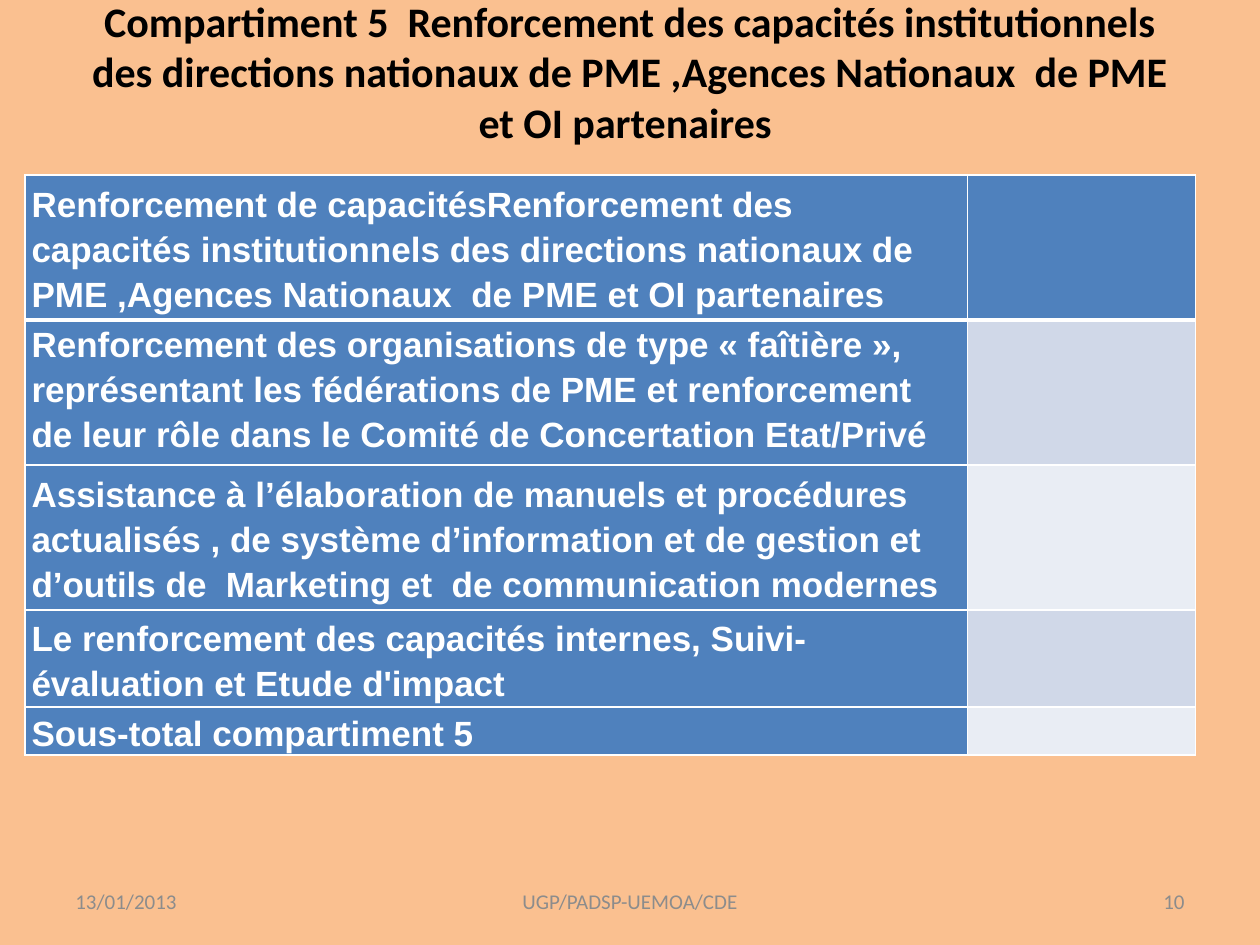
from dataclasses import dataclass

from lxml.etree import SubElement
from pptx import Presentation
from pptx.dml.color import RGBColor
from pptx.enum.text import MSO_ANCHOR as Anchor, PP_ALIGN as Align
from pptx.oxml.ns import qn
from pptx.util import Inches, Pt


@dataclass(frozen=True)
class Theme:
    background: str = "FAC090"
    title: str = "000000"
    label: str = "FFFFFF"
    border: str = "FFFFFF"
    accent: str = "4F81BD"
    bands: tuple = ("D0D8E8", "E9EDF4")
    footer: str = "8C8C8C"
    heading_font: str = "Calibri"
    table_font: str = "Arial"
    title_size: int = 24
    table_size: int = 20
    footer_size: int = 12


THEME = Theme()
WIDTH, HEIGHT = 10, 7.5

TITLE = (
    "Compartiment 5  Renforcement des capacités institutionnels des directions "
    "nationaux de PME ,Agences Nationaux  de PME et OI partenaires "
)
# Label and row height in inches
ACTIVITIES = [
    ("Renforcement de capacitésRenforcement des capacités institutionnels des "
     "directions nationaux de PME ,Agences Nationaux  de PME et OI partenaires", 1.06),
    ("Renforcement des organisations de type « faîtière », représentant les "
     "fédérations de PME et renforcement de leur rôle dans le Comité de "
     "Concertation Etat/Privé", 1.07),
    ("Assistance à l’élaboration de manuels et procédures  actualisés , de système "
     "d’information et de gestion et d’outils de  Marketing et  de communication "
     "modernes", 1.14),
    ("Le renforcement des capacités internes, Suivi-évaluation et Etude d'impact", 0.71),
    ("Sous-total compartiment 5", 0.36),
]
COLUMN_SHARES = (0.805, 0.195)
# Text, left share, width share and alignment within the footer
FOOTER = [
    ("13/01/2013", 0, 0.26, Align.LEFT),
    ("UGP/PADSP-UEMOA/CDE", 0.324, 0.352, Align.CENTER),
    ("10", 0.74, 0.26, Align.RIGHT),
]


def format_text(frame, text, font_name, size, color, bold=False, align=Align.LEFT):
    frame.text = text
    frame.word_wrap = True
    paragraph = frame.paragraphs[0]
    paragraph.alignment = align
    font = paragraph.runs[0].font
    font.name, font.size, font.bold = font_name, Pt(size), bold
    font.color.rgb = RGBColor.from_string(color)
    return paragraph


def add_text(slide, box, text, size, color, **style):
    frame = slide.shapes.add_textbox(*map(Inches, box)).text_frame
    frame.vertical_anchor = Anchor.MIDDLE
    format_text(frame, text, THEME.heading_font, size, color, **style)


def set_borders(cell, bottom_width):
    """Draw the four sides; call before filling, as borders precede the fill."""
    properties = cell._tc.get_or_add_tcPr()
    for side in "LRTB":
        width = bottom_width if side == "B" else 1
        line = SubElement(properties, qn(f"a:ln{side}"), w=str(Pt(width)))
        fill = SubElement(line, qn("a:solidFill"))
        SubElement(fill, qn("a:srgbClr"), val=THEME.border)


def style_cell(cell, color, bottom_width):
    cell.margin_left = cell.margin_right = Inches(0.05)
    cell.margin_top = cell.margin_bottom = 0
    set_borders(cell, bottom_width)
    cell.fill.solid()
    cell.fill.fore_color.rgb = RGBColor.from_string(color)


def add_activity_table(slide, box):
    table = slide.shapes.add_table(
        len(ACTIVITIES), len(COLUMN_SHARES), *map(Inches, box)
    ).table
    table.horz_banding = False
    for column, share in zip(table.columns, COLUMN_SHARES):
        column.width = Inches(box[2] * share)
    for index, (text, height) in enumerate(ACTIVITIES):
        table.rows[index].height = Inches(height)
        label, amount = table.cell(index, 0), table.cell(index, 1)
        is_header = index == 0
        bottom_width = 3 if is_header else 1
        band = THEME.accent if is_header else THEME.bands[(index - 1) % 2]
        style_cell(label, THEME.accent, bottom_width)
        style_cell(amount, band, bottom_width)
        label.vertical_anchor = Anchor.TOP if index == 1 else Anchor.MIDDLE
        paragraph = format_text(label.text_frame, text, THEME.table_font,
                                THEME.table_size, THEME.label, bold=True)
        paragraph.line_spacing = 1.15


def add_footer(slide, box):
    left, top, width, height = box
    for text, offset, share, align in FOOTER:
        part = (left + offset * width, top, share * width, height)
        add_text(slide, part, text, THEME.footer_size, THEME.footer, align=align)


def main():
    presentation = Presentation()
    presentation.slide_width, presentation.slide_height = Inches(WIDTH), Inches(HEIGHT)
    slide = presentation.slides.add_slide(presentation.slide_layouts[6])
    slide.background.fill.solid()
    slide.background.fill.fore_color.rgb = RGBColor.from_string(THEME.background)

    margin = 0.05 * WIDTH
    content_width = WIDTH - 2 * margin
    add_text(slide, (margin, 0.13, content_width, 0.87), TITLE,
             THEME.title_size, THEME.title, bold=True, align=Align.CENTER)
    table_height = sum(height for _, height in ACTIVITIES)
    add_activity_table(slide, (0.2, 1.39, 9.29, table_height))
    add_footer(slide, (margin, 6.95, content_width, 0.4))
    presentation.save("out.pptx")


if __name__ == "__main__":
    main()
